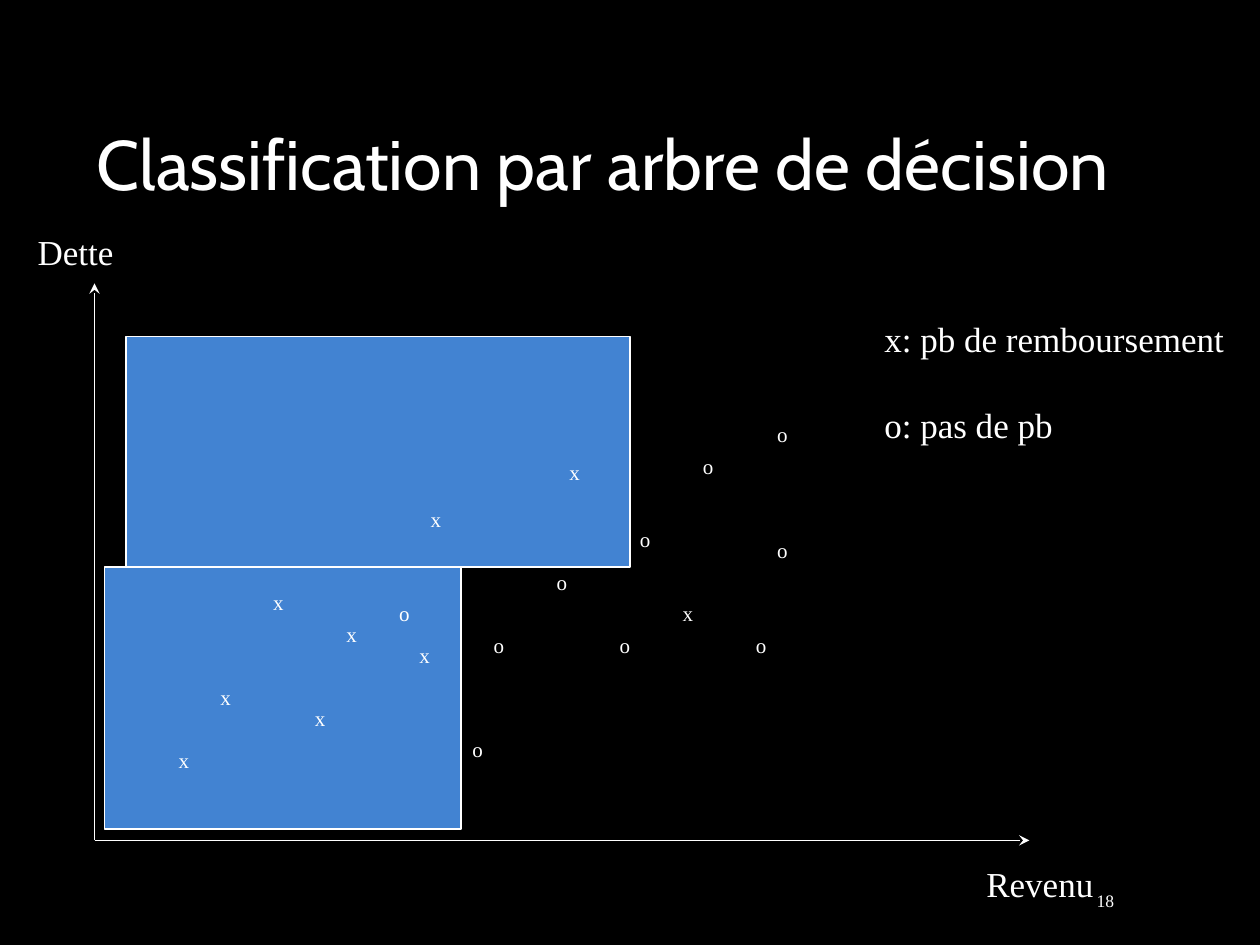
from typing import NamedTuple

from lxml import etree
from pptx import Presentation
from pptx.dml.color import RGBColor
from pptx.enum.shapes import MSO_CONNECTOR, MSO_SHAPE
from pptx.enum.text import MSO_ANCHOR as Anchor, MSO_AUTO_SIZE as AutoSize, PP_ALIGN as Align
from pptx.oxml.ns import qn
from pptx.util import Inches, Pt

WHITE = "FFFFFF"
BLACK = "000000"
BLUE = "4283D2"
SERIF = "Times New Roman"
TITLE_FONT = "Cabin"


class Box(NamedTuple):
    left: float
    top: float
    width: float
    height: float


class Point(NamedTuple):
    x: float
    y: float


class Label(NamedTuple):
    text: str
    box: Box
    size: float = 20
    font: str = SERIF
    anchor: Anchor = Anchor.TOP
    align: Align = Align.LEFT
    wrap: bool = False


# Decision regions and axes
REGIONS = [Box(1, 2.67, 4, 1.83), Box(0.83, 4.5, 2.83, 2.08)]
ORIGIN = Point(0.75, 6.67)
AXIS_ENDS = [Point(0.75, 2.25), Point(8.17, 6.67)]

# Top left corners of the observations, by class
OBSERVATIONS = {
    "x": [
        Point(1.32, 5.88), Point(4.42, 3.6), Point(1.65, 5.38),
        Point(2.65, 4.88), Point(2.4, 5.55), Point(3.23, 5.05),
        Point(3.32, 3.97), Point(5.32, 4.72), Point(2.07, 4.63),
    ],
    "o": [
        Point(4.32, 4.47), Point(4.98, 4.13), Point(5.48, 3.55),
        Point(6.07, 3.3), Point(6.07, 4.22), Point(5.9, 4.97),
        Point(4.82, 4.97), Point(3.65, 5.8), Point(3.82, 4.97),
        Point(3.07, 4.72),
    ],
}

TITLE = Label("Classification par arbre de décision", Box(0.67, 0.42, 8.66, 1.25),
              40, TITLE_FONT, Anchor.BOTTOM, wrap=True)
PAGE_NUMBER = Label("18", Box(7.94, 7, 1, 0.3), 10, SERIF,
                    Anchor.MIDDLE, Align.RIGHT, True)
AXIS_NAMES = [Label("Revenu", Box(7.73, 6.8, 1.06, 0.44)),
              Label("Dette", Box(0.2, 1.78, 0.81, 0.44))]
LEGEND = Label("x: pb de remboursement\no: pas de pb", Box(6.92, 2.47, 2.92, 1.11))


def color(value: str) -> RGBColor:
    return RGBColor.from_string(value)


def inches(box: Box) -> list[Inches]:
    return [Inches(length) for length in box]


def add_label(slide, label: Label):
    """Draw a text label and return its paragraphs."""
    frame = slide.shapes.add_textbox(*inches(label.box)).text_frame
    frame.text = label.text
    frame.word_wrap = label.wrap
    frame.auto_size = AutoSize.NONE if label.wrap else AutoSize.SHAPE_TO_FIT_TEXT
    frame.vertical_anchor = label.anchor
    for paragraph in frame.paragraphs:
        paragraph.alignment = label.align
        for run in paragraph.runs:
            run.font.size = Pt(label.size)
            run.font.name = label.font
            run.font.color.rgb = color(WHITE)
    return frame.paragraphs


def add_region(slide, box: Box) -> None:
    region = slide.shapes.add_shape(MSO_SHAPE.RECTANGLE, *inches(box))
    region.shadow.inherit = False
    region.fill.solid()
    region.fill.fore_color.rgb = color(BLUE)
    region.line.color.rgb = color(WHITE)
    region.line.width = Pt(0.75)


def add_axis(slide, start: Point, end: Point) -> None:
    ends = [Inches(length) for length in (*start, *end)]
    axis = slide.shapes.add_connector(MSO_CONNECTOR.STRAIGHT, *ends)
    axis.line.color.rgb = color(WHITE)
    axis.line.width = Pt(1)
    etree.SubElement(axis.line._get_or_add_ln(), qn("a:tailEnd"), type="stealth")
    etree.SubElement(axis._element.spPr, qn("a:effectLst"))


def main() -> None:
    deck = Presentation()
    deck.slide_width, deck.slide_height = Inches(10), Inches(7.5)
    slide = deck.slides.add_slide(deck.slide_layouts[6])
    slide.background.fill.solid()
    slide.background.fill.fore_color.rgb = color(BLACK)

    # Title and page number
    add_label(slide, TITLE)[0].line_spacing = 0.8
    add_label(slide, PAGE_NUMBER)

    # Plot
    for region in REGIONS:
        add_region(slide, region)
    for end in AXIS_ENDS:
        add_axis(slide, ORIGIN, end)
    for mark, corners in OBSERVATIONS.items():
        for corner in corners:
            add_label(slide, Label(mark, Box(*corner, 0.28, 0.3), size=12))

    # Axis names and legend
    for name in AXIS_NAMES:
        add_label(slide, name)
    add_label(slide, LEGEND)[1].space_before = Pt(25)

    deck.save("out.pptx")


if __name__ == "__main__":
    main()
